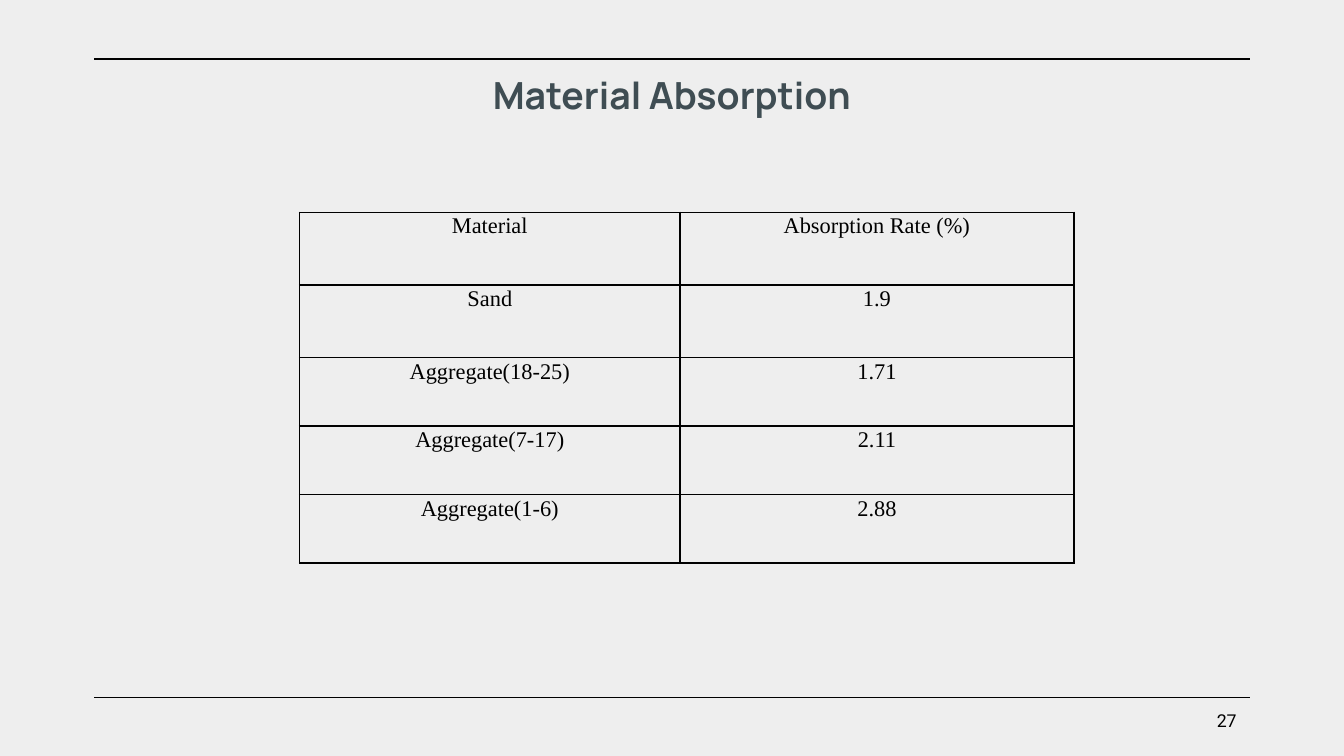
from dataclasses import dataclass

from lxml import etree
from pptx import Presentation, util as u
from pptx.dml.color import RGBColor
from pptx.enum import shapes, text
from pptx.oxml.ns import qn

WIDTH = 10
HEIGHT = WIDTH * 9 / 16
MARGIN = 0.07 * WIDTH
CONTENT_WIDTH = WIDTH - 2 * MARGIN
TOP_RULE, BOTTOM_RULE = 0.44, 5.19
COLORS = {"background": "EEEEEE", "ink": "000000", "title": "3F4D53"}

TABLE_LEFT, TABLE_TOP = 2.23, 1.58
COLUMN_WIDTHS = (2.83, 2.93)
ROW_HEIGHTS = (0.54, 0.54, 0.51, 0.51, 0.51)
ABSORPTION = (
    ("Material", "Absorption Rate (%)"),
    ("Sand", "1.9"),
    ("Aggregate(18-25)", "1.71"),
    ("Aggregate(7-17)", "2.11"),
    ("Aggregate(1-6)", "2.88"),
)


@dataclass(frozen=True)
class Style:
    font: str
    size: float
    color: str
    align: text.PP_ALIGN
    bold: bool = False


@dataclass(frozen=True)
class Label:
    words: str
    left: float
    top: float
    width: float
    height: float
    anchor: text.MSO_ANCHOR
    style: Style


TITLE_STYLE = Style("Manrope", 20, "title", text.PP_ALIGN.CENTER, True)
NUMBER_STYLE = Style("Roboto", 9.5, "ink", text.PP_ALIGN.RIGHT)
CELL_STYLE = Style("Times New Roman", 12, "ink", text.PP_ALIGN.CENTER)

LABELS = (
    Label("27", WIDTH - MARGIN - 0.63, BOTTOM_RULE, 0.63, 0.34,
          text.MSO_ANCHOR.MIDDLE, NUMBER_STYLE),
    Label("Material Absorption", MARGIN, TOP_RULE, CONTENT_WIDTH, 0.6,
          text.MSO_ANCHOR.TOP, TITLE_STYLE),
)


def rgb(name: str) -> RGBColor:
    return RGBColor.from_string(COLORS[name])


def write(frame, words: str, style: Style):
    """Fill a text frame with one styled paragraph and return it."""
    frame.text = words
    paragraph = frame.paragraphs[0]
    paragraph.alignment = style.align
    for run in paragraph.runs:
        run.font.name = style.font
        run.font.size = u.Pt(style.size)
        run.font.bold = style.bold
        run.font.color.rgb = rgb(style.color)
    return paragraph


def add_rule(slide, y: float) -> None:
    rule = slide.shapes.add_connector(
        shapes.MSO_CONNECTOR.STRAIGHT, u.Inches(MARGIN), u.Inches(y),
        u.Inches(WIDTH - MARGIN), u.Inches(y))
    rule.line.color.rgb = rgb("ink")
    rule.line.width = u.Pt(0.75)
    etree.SubElement(rule._element.spPr, qn("a:effectLst"))


def add_label(slide, label: Label) -> None:
    box = slide.shapes.add_textbox(*map(
        u.Inches, (label.left, label.top, label.width, label.height)))
    frame = box.text_frame
    frame.word_wrap = True
    frame.vertical_anchor = label.anchor
    frame.margin_left = frame.margin_right = u.Inches(0.1)
    frame.margin_top = frame.margin_bottom = u.Inches(0.1)
    write(frame, label.words, label.style)


def add_borders(cell) -> None:
    properties = cell._tc.get_or_add_tcPr()
    for side in ("lnL", "lnR", "lnT", "lnB"):
        border = etree.SubElement(properties, qn(f"a:{side}"), w=str(u.Pt(1)))
        fill = etree.SubElement(border, qn("a:solidFill"))
        etree.SubElement(fill, qn("a:srgbClr"), val=COLORS["ink"])


def add_absorption_table(slide) -> None:
    table = slide.shapes.add_table(
        len(ROW_HEIGHTS), len(COLUMN_WIDTHS), u.Inches(TABLE_LEFT),
        u.Inches(TABLE_TOP), u.Inches(sum(COLUMN_WIDTHS)),
        u.Inches(sum(ROW_HEIGHTS))).table
    table.first_row = table.horz_banding = False
    for column, width in zip(table.columns, COLUMN_WIDTHS):
        column.width = u.Inches(width)
    for row, height, entries in zip(table.rows, ROW_HEIGHTS, ABSORPTION):
        row.height = u.Inches(height)
        for cell, entry in zip(row.cells, entries):
            cell.margin_left = cell.margin_right = u.Inches(0.07)
            cell.margin_top = cell.margin_bottom = 0
            paragraph = write(cell.text_frame, entry, CELL_STYLE)
            paragraph.line_spacing = 1.07
            paragraph.space_after = u.Pt(8)
            add_borders(cell)
            cell.fill.background()


def main() -> None:
    deck = Presentation()
    deck.slide_width, deck.slide_height = u.Inches(WIDTH), u.Inches(HEIGHT)
    slide = deck.slides.add_slide(deck.slide_layouts[6])
    slide.background.fill.solid()
    slide.background.fill.fore_color.rgb = rgb("background")
    for y in (TOP_RULE, BOTTOM_RULE):
        add_rule(slide, y)
    for label in LABELS:
        add_label(slide, label)
    add_absorption_table(slide)
    deck.save("out.pptx")


if __name__ == "__main__":
    main()
